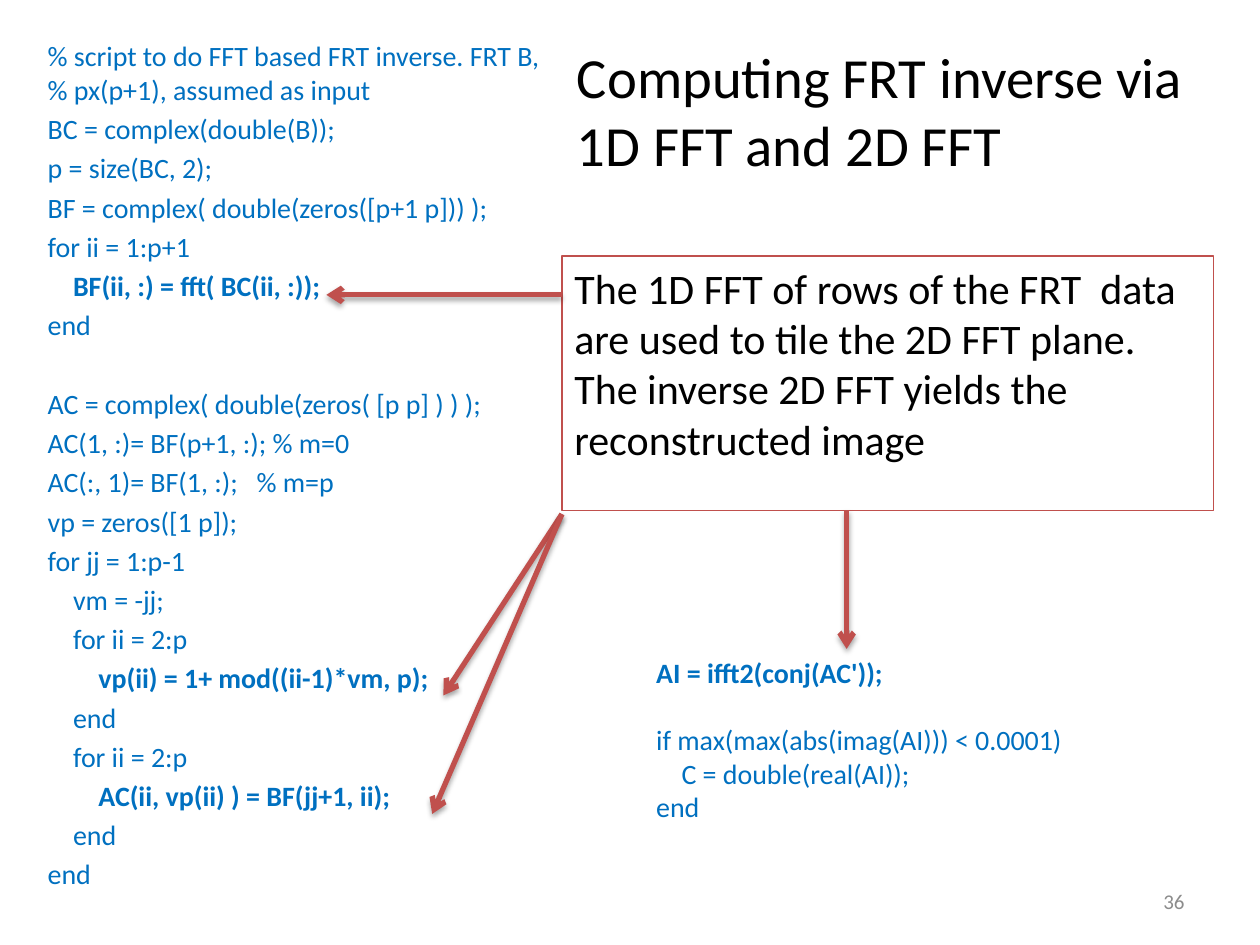
from dataclasses import dataclass

from lxml import etree
from pptx import Presentation
from pptx.dml.color import RGBColor
from pptx.enum import shapes as sh, text as tx
from pptx.oxml import ns
from pptx.util import Pt


@dataclass(frozen=True)
class Theme:
    font: str = "Calibri"
    ink: str = "000000"
    code: str = "0070C0"
    red: str = "C0504D"
    gray: str = "8C8C8C"
    head: float = 32.4
    note: float = 24
    body: float = 16
    foot: float = 12
    tab: float = 14.5
    line: float = 19.5


T = Theme()

# Each code line: indent level, text, bold. None marks a gap of one line.
LEFT = [
    (0, "% script to do FFT based FRT inverse. FRT B,\n% px(p+1), assumed as input", False),
    (0, "BC = complex(double(B));", False),
    (0, "p = size(BC, 2);", False),
    (0, "BF = complex( double(zeros([p+1 p])) );", False),
    (0, "for ii = 1:p+1", False),
    (1, "BF(ii, :) = fft( BC(ii, :));", True),
    (0, "end", False),
    None,
    (0, "AC = complex( double(zeros( [p p] ) ) );", False),
    (0, "AC(1, :)= BF(p+1, :); % m=0", False),
    (0, "AC(:, 1)= BF(1, :);   % m=p", False),
    (0, "vp = zeros([1 p]);", False),
    (0, "for jj = 1:p-1", False),
    (1, "vm = -jj;", False),
    (1, "for ii = 2:p", False),
    (2, "vp(ii) = 1+ mod((ii-1)*vm, p);", True),
    (1, "end", False),
    (1, "for ii = 2:p", False),
    (2, "AC(ii, vp(ii) ) = BF(jj+1, ii);", True),
    (1, "end", False),
    (0, "end", False),
]
RIGHT = [
    (0, "AI = ifft2(conj(AC'));", True),
    None,
    (0, "if max(max(abs(imag(AI))) < 0.0001)", False),
    (1, "C = double(real(AI));", False),
    (0, "end", False),
]


def put(para, words, size, color, bold=False):
    """Add words to a paragraph, one run for each line."""
    for i, part in enumerate(words.split("\n")):
        if i:
            para.add_line_break()
        run = para.add_run()
        run.text = part
        run.font.name, run.font.size, run.font.bold = T.font, Pt(size), bold
        run.font.color.rgb = RGBColor.from_string(color)


def frame(slide, box):
    body = slide.shapes.add_textbox(*map(Pt, box)).text_frame
    body.word_wrap = True
    return body


def label(slide, box, words, size, color, align):
    body = frame(slide, box)
    body.vertical_anchor = tx.MSO_ANCHOR.MIDDLE
    para = body.paragraphs[0]
    para.alignment = align
    put(para, words, size, color)


def code(slide, box, lines, gap):
    """Set a listing with gap points before each line."""
    body = frame(slide, box)
    para, skip = body.paragraphs[0], 0
    for i, line in enumerate(lines):
        if line is None:
            skip = T.line + gap
            continue
        level, words, bold = line
        if i:
            para = body.add_paragraph()
        para.space_before = Pt(gap + skip)
        props = para._p.get_or_add_pPr()
        props.set("marL", str(Pt(level * T.tab)))
        props.set("indent", "0")
        put(para, words, T.body, T.code, bold)
        skip = 0


def note(slide, box, words):
    rect = slide.shapes.add_shape(sh.MSO_SHAPE.RECTANGLE, *map(Pt, box))
    rect.shadow.inherit = False
    rect.fill.background()
    rect.line.color.rgb = RGBColor.from_string(T.red)
    rect.line.width = Pt(0.75)
    body = rect.text_frame
    body.word_wrap = True
    body.vertical_anchor = tx.MSO_ANCHOR.TOP
    para = body.paragraphs[0]
    para.alignment = tx.PP_ALIGN.LEFT
    put(para, words, T.note, T.ink)


def arrow(slide, start, end):
    """Draw a line with an open head at its end and a soft shadow."""
    link = slide.shapes.add_connector(
        sh.MSO_CONNECTOR.STRAIGHT, *map(Pt, start + end))
    link.line.color.rgb = RGBColor.from_string(T.red)
    link.line.width = Pt(3)
    etree.SubElement(link.line._get_or_add_ln(), ns.qn("a:tailEnd"), type="arrow")
    props = link._element.spPr
    fx = etree.SubElement(props, ns.qn("a:effectLst"))
    shade = etree.SubElement(
        fx, ns.qn("a:outerShdw"), blurRad=str(Pt(3.1)), dist=str(Pt(1.8)),
        dir="5400000", rotWithShape="0")
    tint = etree.SubElement(shade, ns.qn("a:srgbClr"), val=T.ink)
    etree.SubElement(tint, ns.qn("a:alpha"), val="35000")


def main():
    deck = Presentation()
    deck.slide_width, deck.slide_height = Pt(720), Pt(540)
    slide = deck.slides.add_slide(deck.slide_layouts[6])
    label(slide, (322.6, 28.8, 366.5, 67.7),
          "Computing FRT inverse via 1D FFT and 2D FFT",
          T.head, T.ink, tx.PP_ALIGN.LEFT)
    code(slide, (20.2, 18.7, 324, 499.7), LEFT, 3.2)
    x, y, w, h = box = (321.1, 146.2, 372.2, 145.4)
    note(slide, box, "The 1D FFT of rows of the FRT  data are used to tile the 2D FFT "
                     "plane. The inverse 2D FFT yields the reconstructed image")
    code(slide, (367.9, 370.8, 276.5, 126), RIGHT, 0)
    label(slide, (516.2, 500.4, 167.8, 28.8), "36",
          T.foot, T.gray, tx.PP_ALIGN.RIGHT)
    corner = (x, y + h + 2.2)
    for start, end in [
        ((x, 168.5), (186.5, 168.5)),
        (corner, (253.4, 397.4)),
        ((483.8, y + h), (483.8, 370.8)),
        (corner, (247, 465.1)),
    ]:
        arrow(slide, start, end)
    deck.save("out.pptx")


if __name__ == "__main__":
    main()
